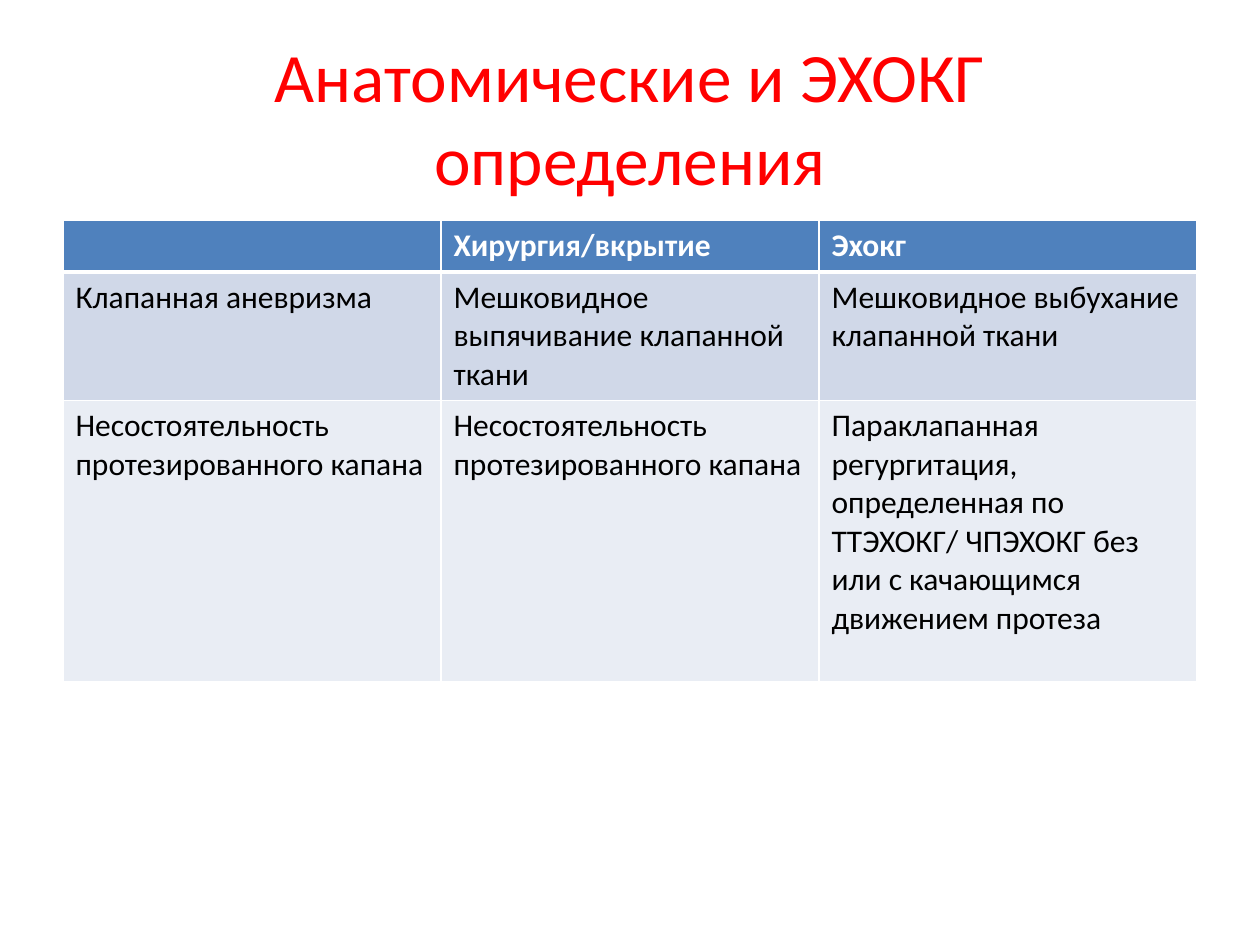
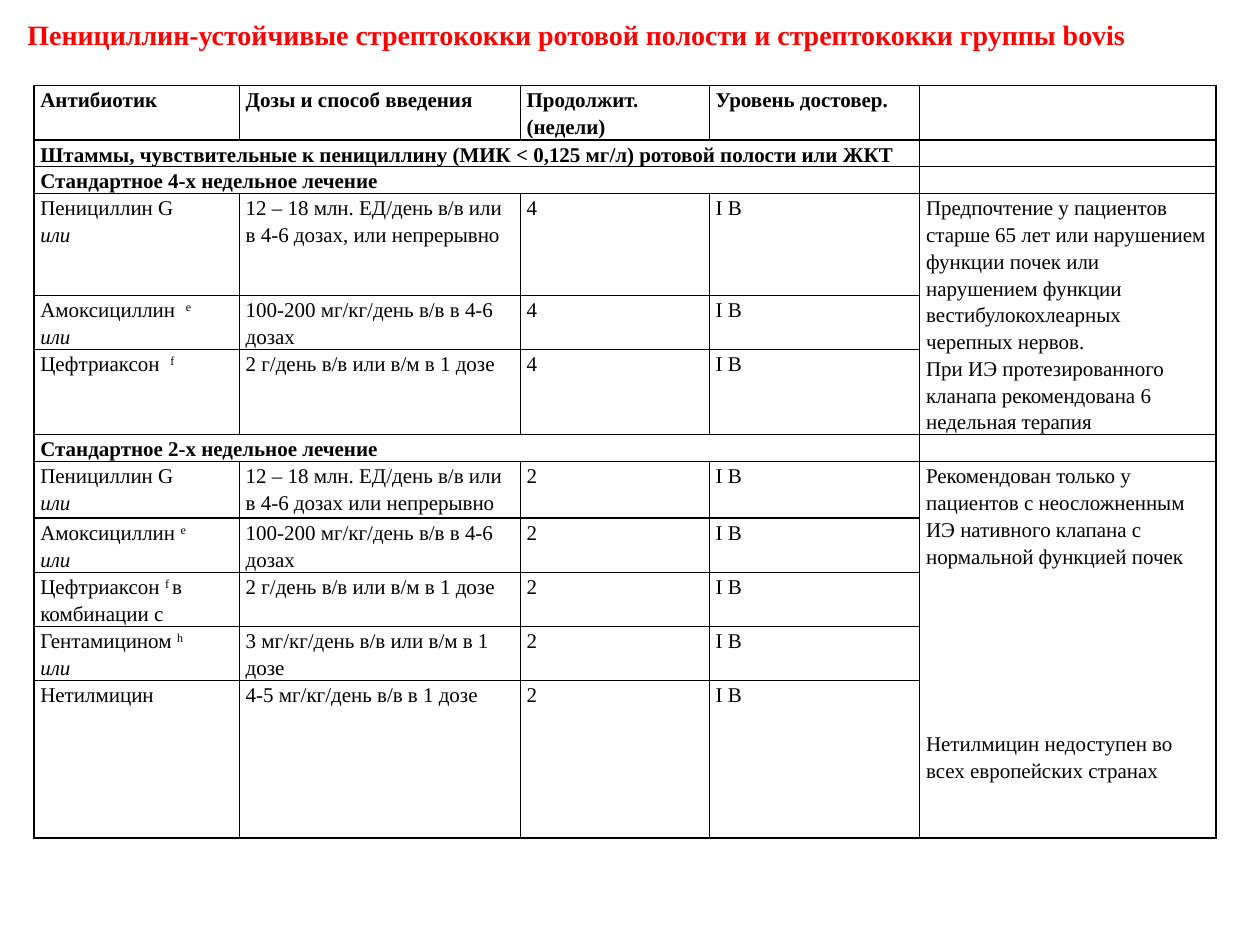
from lxml import etree
from pptx import Presentation
from pptx import util as u
from pptx.dml.color import RGBColor
from pptx.enum import text as t
from pptx.oxml.ns import qn

RED = RGBColor(0xFF, 0x00, 0x00)
BLACK = RGBColor(0x00, 0x00, 0x00)
WHITE = RGBColor(0xFF, 0xFF, 0xFF)
BLUE = RGBColor(0x4F, 0x81, 0xBD)
DARK = RGBColor(0xD0, 0xD8, 0xE8)
LIGHT = RGBColor(0xE9, 0xED, 0xF4)
SANS, SERIF = "Calibri", "Times New Roman"


def write(par, words, face, size, color, bold=False):
    """Add runs split at "|"; a leading "^" raises a run."""
    for part in words.split("|"):
        run = par.add_run()
        run.text = part.lstrip("^")
        font = run.font
        font.name, font.size, font.bold = face, u.Pt(size), bold
        font.italic = part == "или"
        font.color.rgb = color
        if part.startswith("^"):
            run._r.get_or_add_rPr().set("baseline", "30000")


def frame(cell, color, low=1):
    """Draw the four borders of a cell; low is the bottom width."""
    props = cell._tc.get_or_add_tcPr()
    for side, width in (("L", 1), ("R", 1), ("T", 1), ("B", low)):
        line = etree.SubElement(props, qn("a:ln" + side), w=str(u.Pt(width)))
        fill = etree.SubElement(line, qn("a:solidFill"))
        etree.SubElement(fill, qn("a:srgbClr"), val=str(color))


deck = Presentation()
deck.slide_width, deck.slide_height = u.Inches(10), u.Inches(7.5)
blank = deck.slide_layouts[6]

# Slide 1: title
slide = deck.slides.add_slide(blank)
box = slide.shapes.add_textbox(u.Inches(0.5), u.Inches(0.3), u.Inches(9), u.Inches(1.25))
body = box.text_frame
body.word_wrap = True
body.vertical_anchor = t.MSO_ANCHOR.MIDDLE
body.paragraphs[0].alignment = t.PP_ALIGN.CENTER
write(body.paragraphs[0], "Анатомические и ЭХОКГ определения", SANS, 39.6, RED)

# Slide 1: table of terms
terms = [
    ["", "Хирургия/вкрытие", "Эхокг"],
    ["Клапанная аневризма", "Мешковидное выпячивание клапанной ткани",
     "Мешковидное выбухание клапанной ткани"],
    ["Несостоятельность протезированного капана",
     "Несостоятельность протезированного капана",
     "Параклапанная регургитация, определенная по ТТЭХОКГ/ ЧПЭХОКГ без или с "
     "качающимся движением протеза"],
]
highs = [0.41, 1.02, 2.23]
fills = [BLUE, DARK, LIGHT]
grid = slide.shapes.add_table(3, 3, u.Inches(0.5), u.Inches(1.75),
                              u.Inches(9), u.Inches(sum(highs))).table
for r, row in enumerate(terms):
    grid.rows[r].height = u.Inches(highs[r])
    head = r == 0
    for c, words in enumerate(row):
        cell = grid.cell(r, c)
        frame(cell, WHITE, 3 if head else 1)
        cell.fill.solid()
        cell.fill.fore_color.rgb = fills[r]
        if words:
            write(cell.text_frame.paragraphs[0], words, SANS, 18,
                  WHITE if head else BLACK, head)

# Slide 2: table of doses
slide = deck.slides.add_slide(blank)
pen = "Пенициллин G\nили"
shot = "2 г/день в/в или в/м в 1 дозе"
drip = "100-200 мг/кг/день в/в в 4-6 дозах"
level = "I B"
doses = [
    (0.43, ["Антибиотик", "Дозы и способ введения", "Продолжит. (недели)",
            "Уровень достовер."]),
    (0.21, ["Штаммы, чувствительные к пенициллину (МИК < 0,125 мг/л) "
            "ротовой полости или ЖКТ"]),
    (0.21, ["Стандартное 4-х недельное лечение"]),
    (0.81, [pen, "12 – 18 млн. ЕД/день в/в или в 4-6 дозах, или непрерывно", "4", level,
            "Предпочтение у пациентов старше 65 лет или нарушением функции почек или "
            "нарушением функции вестибулокохлеарных черепных нервов.\n"
            "При ИЭ протезированного кланапа рекомендована 6 недельная терапия"]),
    (0.43, ["Амоксициллин  |^е\nили", drip, "4", level]),
    (0.67, ["Цефтриаксон  |^f", shot, "4", level]),
    (0.21, ["Стандартное 2-х недельное лечение"]),
    (0.45, [pen, "12 – 18 млн. ЕД/день в/в или в 4-6 дозах или непрерывно", "2", level,
            "Рекомендован только у пациентов с неосложненным ИЭ нативного клапана "
            "с нормальной функцией почек\n"
            "Нетилмицин недоступен во всех европейских странах"]),
    (0.43, ["Амоксициллин |^е\nили", drip, "2", level]),
    (0.43, ["Цефтриаксон |^f |в комбинации с", shot, "2", level]),
    (0.43, ["Гентамицином |^h\nили", "3 мг/кг/день в/в или в/м в 1 дозе", "2", level]),
    (1.25, ["Нетилмицин", "4-5 мг/кг/день в/в в 1 дозе", "2", level]),
]
wides = [1.63, 2.23, 1.5, 1.67, 2.35]
grid = slide.shapes.add_table(len(doses), len(wides), u.Inches(0.27), u.Inches(0.68),
                              u.Inches(sum(wides)),
                              u.Inches(sum(high for high, _ in doses))).table
for col, wide in zip(grid.columns, wides):
    col.width = u.Inches(wide)
for r, (high, row) in enumerate(doses):
    grid.rows[r].height = u.Inches(high)
    bold = r == 0 or len(row) == 1
    for c in range(len(wides)):
        cell = grid.cell(r, c)
        cell.margin_left = cell.margin_right = u.Inches(0.05)
        cell.margin_top = cell.margin_bottom = 0
        frame(cell, BLACK)
        cell.fill.background()
        body = cell.text_frame
        words = row[c] if c < len(row) else ""
        for n, line in enumerate(words.split("\n")):
            par = body.add_paragraph() if n else body.paragraphs[0]
            par.line_spacing = u.Pt(15.3)
            if line:
                write(par, line, SERIF, 12, BLACK, bold)
            else:
                etree.SubElement(par._p, qn("a:endParaRPr"), sz="1200")
    if len(row) == 1:
        grid.cell(r, 0).merge(grid.cell(r, 3))

# Notes in the last column span their groups
grid.cell(3, 4).merge(grid.cell(5, 4))
grid.cell(7, 4).merge(grid.cell(11, 4))
grid.cell(7, 4).text_frame.paragraphs[1].space_before = u.Pt(92)

# Slide 2: heading
box = slide.shapes.add_textbox(u.Inches(0.12), u.Inches(0.09), u.Inches(9.1), u.Inches(0.37))
body = box.text_frame
body.word_wrap = False
body.auto_size = t.MSO_AUTO_SIZE.SHAPE_TO_FIT_TEXT
body.vertical_anchor = t.MSO_ANCHOR.MIDDLE
write(body.paragraphs[0],
      "Пенициллин-устойчивые стрептококки ротовой полости и стрептококки группы bovis",
      SERIF, 16, RED, True)

deck.save("out.pptx")
